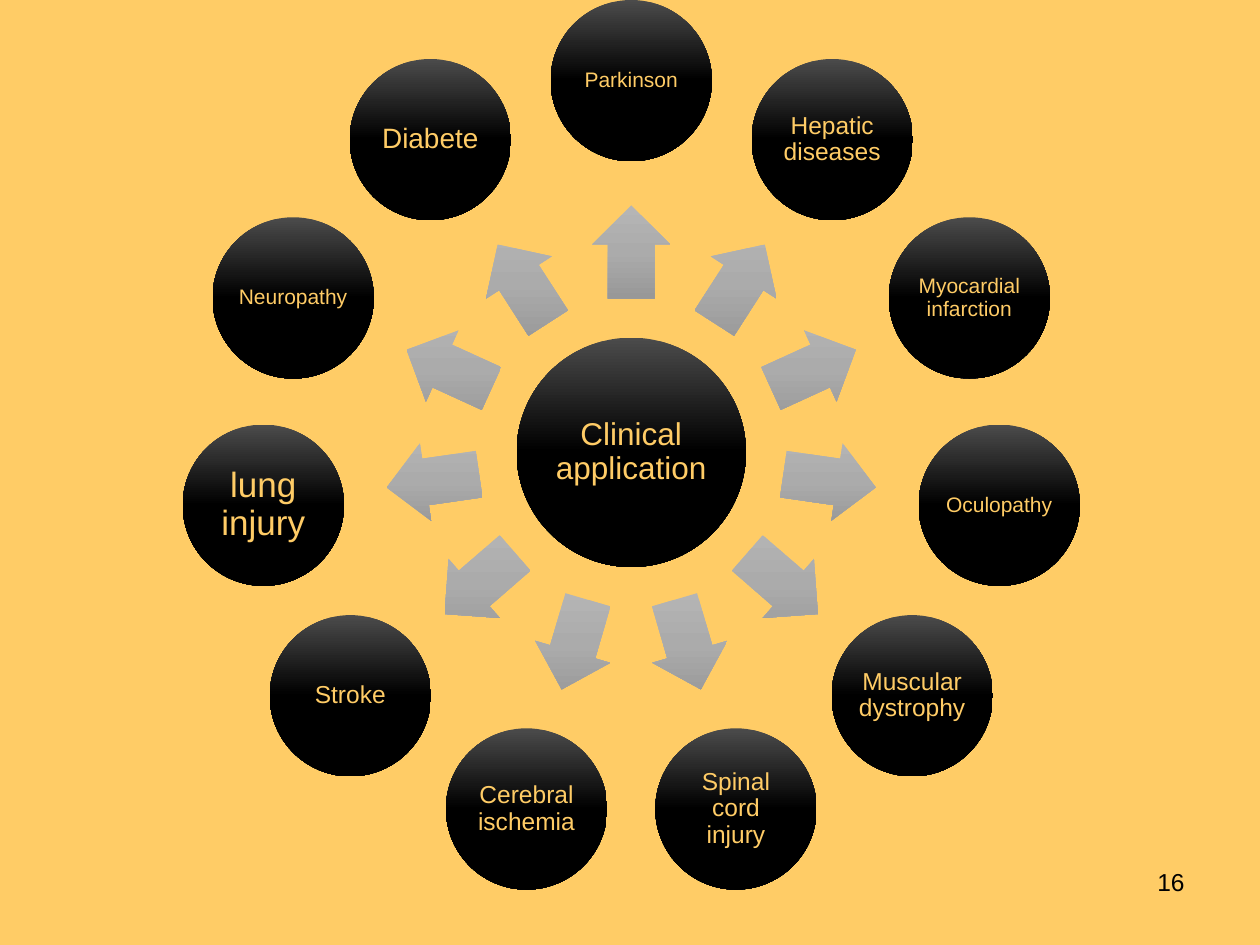
from copy import deepcopy
from math import cos, radians, sin

from pptx import Presentation
from pptx import util as u
from pptx.dml.color import RGBColor
from pptx.enum import shapes, text

GOLD = "FFCC66"
DARK = ("4B4B4B", "000000", "000000")
GREY = ("B5B5B5", "ABABAB", "989898")
NODES = [
    ("Parkinson", 12),
    ("Hepatic diseases", 14),
    ("Myocardial infarction", 12),
    ("Oculopathy", 12),
    ("Muscular dystrophy", 14),
    ("Spinal cord injury", 14),
    ("Cerebral ischemia", 14),
    ("Stroke", 14),
    ("lung injury", 20),
    ("Neuropathy", 12),
    ("Diabete", 16),
]


def color(code):
    return RGBColor.from_string(code)


def shade(shape, codes):
    shape.fill.gradient()
    shape.fill.gradient_angle = 270
    grad = shape.element.spPr.xpath("a:gradFill")[0]
    grad.set("rotWithShape", "0")
    stops = grad.xpath("a:gsLst")[0]
    stops.append(deepcopy(stops[-1]))
    for stop, place, code in zip(shape.fill.gradient_stops, (0, 0.5, 1), codes):
        stop.position = place
        stop.color.rgb = color(code)


def add_shape(slide, kind, x, y, w, h, codes):
    shape = slide.shapes.add_shape(
        kind, u.Inches(x - w / 2), u.Inches(y - h / 2), u.Inches(w), u.Inches(h))
    shape.shadow.inherit = False
    shape.line.fill.background()
    shade(shape, codes)
    return shape


def write(frame, label, size, code, align):
    frame.word_wrap = True
    para = frame.paragraphs[0]
    para.text = label
    para.alignment = align
    para.font.name = "Arial"
    para.font.size = u.Pt(size)
    para.font.color.rgb = color(code)
    return para


def add_disc(slide, x, y, size, label, points):
    disc = add_shape(slide, shapes.MSO_SHAPE.OVAL, x, y, size, size, DARK)
    frame = disc.text_frame
    frame.margin_left = frame.margin_right = u.Inches(0.02)
    frame.margin_top = frame.margin_bottom = u.Inches(0.02)
    frame.vertical_anchor = text.MSO_ANCHOR.MIDDLE
    para = write(frame, label, points, GOLD, text.PP_ALIGN.CENTER)
    para.line_spacing = 0.9


def add_arrow(slide, x, y, angle):
    arrow = add_shape(slide, shapes.MSO_SHAPE.RIGHT_ARROW, x, y, 0.74, 0.62, GREY)
    arrow.adjustments[0] = 0.6
    arrow.adjustments[1] = 0.5
    arrow.rotation = angle % 360


def add_wheel(slide, left, top, size):
    node = 1.28
    outer = (size - node) / 2
    inner = 1.59
    x, y = left + size / 2, top + size / 2
    add_disc(slide, x, y, 1.82, "Clinical application", 18)
    for i, (label, points) in enumerate(NODES):
        angle = i * 360 / len(NODES) - 90
        dx, dy = cos(radians(angle)), sin(radians(angle))
        add_arrow(slide, x + inner * dx, y + inner * dy, angle)
        add_disc(slide, x + outer * dx, y + outer * dy, node, label, points)


def add_number(slide, left, top, width, height):
    box = slide.shapes.add_textbox(
        u.Inches(left), u.Inches(top), u.Inches(width), u.Inches(height))
    write(box.text_frame, "16", 14, "000000", text.PP_ALIGN.RIGHT)


def main():
    deck = Presentation()
    deck.slide_width, deck.slide_height = u.Inches(10), u.Inches(7.5)
    slide = deck.slides.add_slide(deck.slide_layouts[6])
    slide.background.fill.solid()
    slide.background.fill.fore_color.rgb = color(GOLD)
    add_wheel(slide, 1.42, 0, 7.18)
    add_number(slide, 7.17, 6.83, 2.33, 0.52)
    deck.save("out.pptx")


if __name__ == "__main__":
    main()
